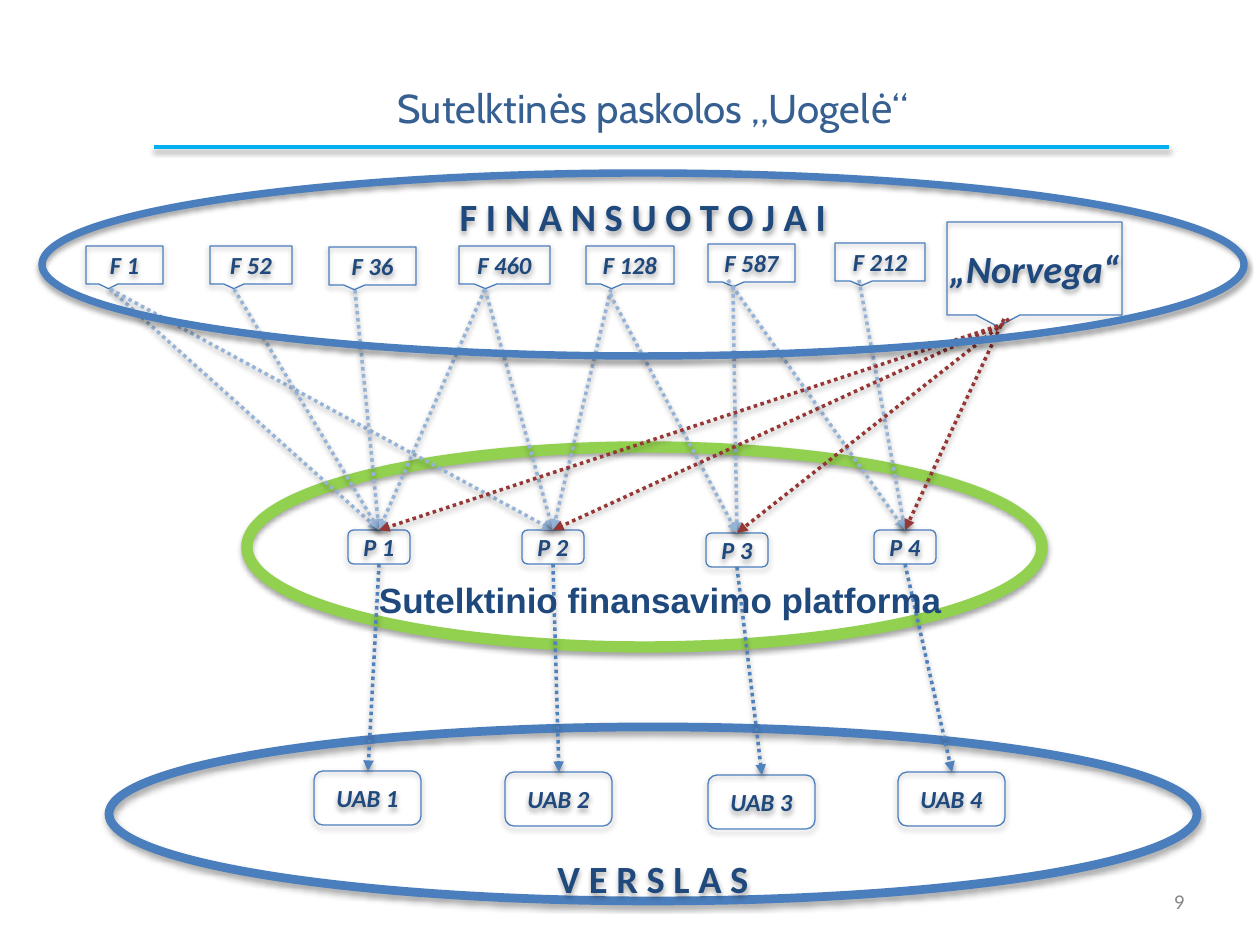
import pptx
import pptx.util
import pptx.dml.color
import pptx.enum.dml
import pptx.enum.shapes
import pptx.enum.text
import pptx.oxml
import pptx.oxml.ns

SCALE = 914400 / 126
SHAPE = pptx.enum.shapes.MSO_SHAPE
ALIGN = pptx.enum.text.PP_ALIGN
ANCHOR = pptx.enum.text.MSO_ANCHOR
NAVY, BLUE, GREEN = "1F497D", "4B7EBC", "92D050"
PALE, MID, RED, CYAN = "95B3D7", "4F81BD", "953735", "00B0F0"

FUNDERS = [
    ("F 1", 86, 246, 77),
    ("F 52", 210, 246, 82),
    ("F 36", 329, 247, 87),
    ("F 460", 459, 246, 91),
    ("F 128", 586, 246, 88),
    ("F 587", 708, 244, 87),
    ("F 212", 835, 243, 90),
]
PROJECTS = [(348, 530), (522, 530), (706, 533), (874, 530)]
COMPANIES = [(314, 771), (505, 772), (708, 775), (898, 772)]
FUNDER_LOANS = [
    (110, 289, 0), (110, 289, 1), (355, 290, 0), (234, 289, 0),
    (485, 289, 0), (485, 289, 1), (611, 289, 1), (728, 280, 3),
    (859, 280, 3), (733, 287, 2), (610, 294, 2),
]
AGENCY_LOANS = [(1004, 319, 3), (1009, 319, 2), (998, 326, 1), (998, 326, 0)]


def px(*lengths):
    return [round(length * SCALE) for length in lengths]


def color(hex_value):
    return pptx.dml.color.RGBColor.from_string(hex_value)


def add_shadow(element, distance, alpha):
    effects = pptx.oxml.parse_xml(
        f'<a:effectLst {pptx.oxml.ns.nsdecls("a")}>'
        f'<a:outerShdw blurRad="40000" dist="{distance}" dir="5400000" rotWithShape="0">'
        f'<a:srgbClr val="000000"><a:alpha val="{alpha}"/></a:srgbClr>'
        '</a:outerShdw></a:effectLst>'
    )
    element._element.spPr.append(effects)


def write(frame, text, size, hex_value=NAVY, font="Calibri", bold=True,
          italic=False, align=ALIGN.CENTER):
    frame.text = text
    frame.vertical_anchor = ANCHOR.MIDDLE
    paragraph = frame.paragraphs[0]
    paragraph.alignment = align
    style = paragraph.runs[0].font
    style.name, style.size = font, pptx.util.Pt(size)
    style.bold, style.italic = bold, italic
    style.color.rgb = color(hex_value)


def add_label(slide, box, text, size, shadow=False, **style):
    label = slide.shapes.add_textbox(*px(*box))
    label.text_frame.word_wrap = True
    write(label.text_frame, text, size, **style)
    if shadow:
        add_shadow(label, 23000, 35000)


def add_outline(slide, kind, box, hex_value=BLUE, weight=0.75):
    outline = slide.shapes.add_shape(kind, *px(*box))
    outline.fill.background()
    outline.line.color.rgb = color(hex_value)
    outline.line.width = pptx.util.Pt(weight)
    add_shadow(outline, 23000, 35000)
    return outline


def add_node(slide, kind, box, text, size=14):
    frame = add_outline(slide, kind, box).text_frame
    frame.margin_left = frame.margin_right = 0
    frame.margin_top = frame.margin_bottom = 0
    frame.word_wrap = False
    write(frame, text, size, italic=True)


def add_line(slide, start, end, hex_value):
    line = slide.shapes.add_connector(
        pptx.enum.shapes.MSO_CONNECTOR.STRAIGHT, *px(*start, *end))
    line.line.color.rgb = color(hex_value)
    line.line.width = pptx.util.Pt(2)
    add_shadow(line, 20000, 38000)
    return line


def add_arrow(slide, start, end, hex_value):
    arrow = add_line(slide, start, end, hex_value)
    arrow.line.dash_style = pptx.enum.dml.MSO_LINE.ROUND_DOT
    arrow.line._get_or_add_ln().append(pptx.oxml.parse_xml(
        f'<a:tailEnd {pptx.oxml.ns.nsdecls("a")} type="triangle"/>'))


def add_loans(slide, loans, hex_value):
    for x, y, project in loans:
        left, top = PROJECTS[project]
        add_arrow(slide, (x, y), (left + 31, top), hex_value)


def main():
    deck = pptx.Presentation()
    deck.slide_width, deck.slide_height = px(1260, 945)
    slide = deck.slides.add_slide(deck.slide_layouts[6])

    add_label(slide, (193, 76, 921, 62), "Sutelktinės paskolos „Uogelė“", 23,
              hex_value="376092", font="Cabin", bold=False)
    add_label(slide, (903, 876, 294, 50), "9", 12, hex_value="898989",
              bold=False, align=ALIGN.RIGHT)

    add_outline(slide, SHAPE.OVAL, (247, 447, 795, 200), GREEN, 6.5)
    for number, (left, top) in enumerate(PROJECTS, 1):
        add_node(slide, SHAPE.ROUNDED_RECTANGLE, (left, top, 62, 34), f"P {number}")
    for name, left, top, width in FUNDERS:
        add_node(slide, SHAPE.RECTANGULAR_CALLOUT, (left, top, width, 38), name)
    add_node(slide, SHAPE.RECTANGULAR_CALLOUT, (947, 222, 175, 93), "„Norvega“", 22)
    add_loans(slide, FUNDER_LOANS, PALE)
    add_loans(slide, AGENCY_LOANS, RED)

    for number, (left, top) in enumerate(COMPANIES, 1):
        add_node(slide, SHAPE.ROUNDED_RECTANGLE, (left, top, 107, 54), f"UAB {number}")
    add_outline(slide, SHAPE.OVAL, (109, 727, 1088, 174), BLUE, 5)
    add_label(slide, (353, 848, 600, 60), "V E R S L A S", 22, shadow=True)
    for (left, top), (company_left, company_top) in zip(PROJECTS, COMPANIES):
        add_arrow(slide, (left + 31, top + 34),
                  (company_left + 54, company_top), MID)

    add_outline(slide, SHAPE.OVAL, (42, 173, 1202, 183), BLUE, 4.25)
    add_label(slide, (343, 186, 600, 60), "F I N A N S U O T O J A I", 22, shadow=True)
    add_line(slide, (154, 147), (1169, 147), CYAN)
    add_label(slide, (200, 571, 921, 56), "Sutelktinio finansavimo platforma", 20,
              font="Arial")

    deck.save("out.pptx")


if __name__ == "__main__":
    main()
